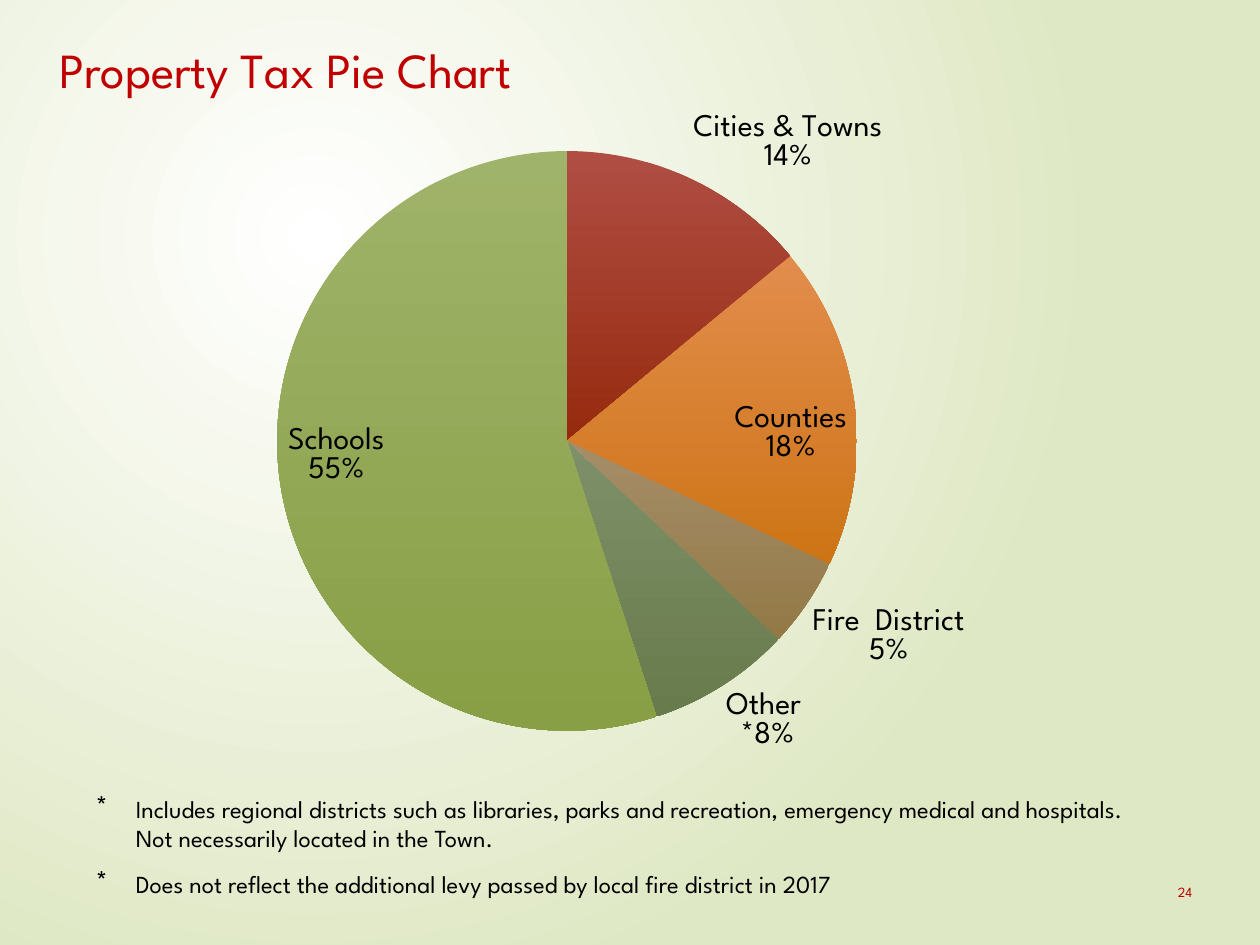
from lxml.etree import SubElement as Sub
from pptx import Presentation as Deck
from pptx.chart.data import CategoryChartData as Data
from pptx.dml.color import RGBColor as Rgb
from pptx.enum.chart import XL_CHART_TYPE as Kind, XL_LABEL_POSITION as Spot
from pptx.oxml.ns import qn
from pptx.util import Inches, Pt

WIDE, HIGH = 10, 7.5
FACE = "League Spartan"
HEAD = "Property Tax Pie Chart"
HUES = {"ink": "000000", "red": "C00000", "white": "FFFFFF", "sage": "DFE8C4"}
OUT, IN = Spot.OUTSIDE_END, Spot.INSIDE_END
PARTS = [
    ("Cities & Towns", 14, "B04E44", "962A0E", OUT),
    ("Counties", 18, "E28D4D", "CD7415", IN),
    ("Fire  District", 5, "A58D69", "937946", OUT),
    ("Other ", 8, "7E9069", "687B4C", OUT),
    ("Schools", 55, "A0B36A", "889F45", IN),
]
NOTES = [
    "Includes regional districts such as libraries, parks and recreation, "
    "emergency medical and hospitals. Not necessarily located in the Town.",
    "Does not reflect the additional levy passed by local fire district in 2017",
]


def area(x, y, w, h):
    return [Inches(v) for v in (x * WIDE, y * HIGH, w * WIDE, h * HIGH)]


def style(font, size, hue):
    for key, val in {"name": FACE, "size": Pt(size), "bold": False}.items():
        setattr(font, key, val)
    font.color.rgb = Rgb.from_string(HUES[hue])


def blend(fill, *tones):
    fill.gradient()
    for stop, tone, pos in zip(fill.gradient_stops, tones, (0, 1)):
        stop.color.rgb = Rgb.from_string(tone)
        stop.position = pos


def paint(slide):
    blend(slide.background.fill, HUES["white"], HUES["sage"])
    grad = slide.element.find(".//" + qn("a:gradFill"))
    grad.remove(grad.find(qn("a:lin")))
    ring = Sub(grad, qn("a:path"), path="circle")
    Sub(ring, qn("a:fillToRect"), l="50000", t="50000", r="100000", b="100000")


def place(node, index, **spots):
    old = node.find(qn("c:layout"))
    if old is not None:
        node.remove(old)
    lay = Sub(node, qn("c:layout"))
    man = Sub(lay, qn("c:manualLayout"))
    if "w" in spots:
        Sub(man, qn("c:layoutTarget"), val="inner")
    for axis in "xy":
        Sub(man, qn(f"c:{axis}Mode"), val="edge")
    for key, val in spots.items():
        Sub(man, qn(f"c:{key}"), val=str(val))
    node.insert(index, lay)


def tag(point, spot, text=None):
    label = point.data_label
    if text:
        label.text_frame.text = text
        for para in label.text_frame.paragraphs:
            for run in para.runs:
                style(run.font, 18, "ink")
    label.position = spot


def show(root):
    flags = {"showVal": "0", "showCatName": "1", "showPercent": "1"}
    for label in root.iter(qn("c:dLbl")):
        for key, val in flags.items():
            label.find(qn(f"c:{key}")).set("val", val)
        Sub(label, qn("c:separator")).text = "\n"


def draw(slide):
    data = Data()
    data.categories = [part[0] for part in PARTS]
    data.add_series(HEAD, [part[1] for part in PARTS])
    box = area(0, 0, 1, 5 / 6)
    chart = slide.shapes.add_chart(Kind.PIE, *box, data).chart
    chart.has_legend = False
    style(chart.font, 18, "ink")
    chart.has_title = True
    frame = chart.chart_title.text_frame
    frame.text = HEAD
    style(frame.paragraphs[0].runs[0].font, 28, "red")
    plot = chart.plots[0]
    plot.vary_by_categories = True
    for i, (name, val, top, low, spot) in enumerate(PARTS):
        point = plot.series[0].points[i]
        blend(point.format.fill, top, low)
        point.format.fill.gradient_angle = 270
        point.format.line.fill.background()
        tag(point, spot, f"{name}\n*{val}%" if name == "Other " else None)
    root = chart.element
    show(root)
    place(root.find(".//" + qn("c:title")), 1, x=0.04, y=0.05)
    place(root.find(".//" + qn("c:plotArea")), 0, x=0.22, y=0.19, w=0.46, h=0.74)


def write(slide, box, lines, size, hue, mark=None):
    frame = slide.shapes.add_textbox(*box).text_frame
    frame.word_wrap = True
    for i, line in enumerate(lines):
        para = frame.add_paragraph() if i else frame.paragraphs[0]
        run = para.add_run()
        run.text = line
        style(run.font, size, hue)
        if i:
            para.space_before = Pt(9.6)
        if mark:
            prop = para._p.get_or_add_pPr()
            prop.set("marL", str(Inches(0.31)))
            prop.set("indent", str(Inches(-0.31)))
            Sub(prop, qn("a:buChar"), char=mark)


def main():
    deck = Deck()
    deck.slide_width, deck.slide_height = Inches(WIDE), Inches(HIGH)
    slide = deck.slides.add_slide(deck.slide_layouts[6])
    paint(slide)
    draw(slide)
    write(slide, area(0.925, 0.928, 0.064, 0.053), ["24"], 8, "red")
    write(slide, area(0.067, 5 / 6, 0.867, 0.125), NOTES, 14, "ink", "*")
    deck.save("out.pptx")


if __name__ == "__main__":
    main()
